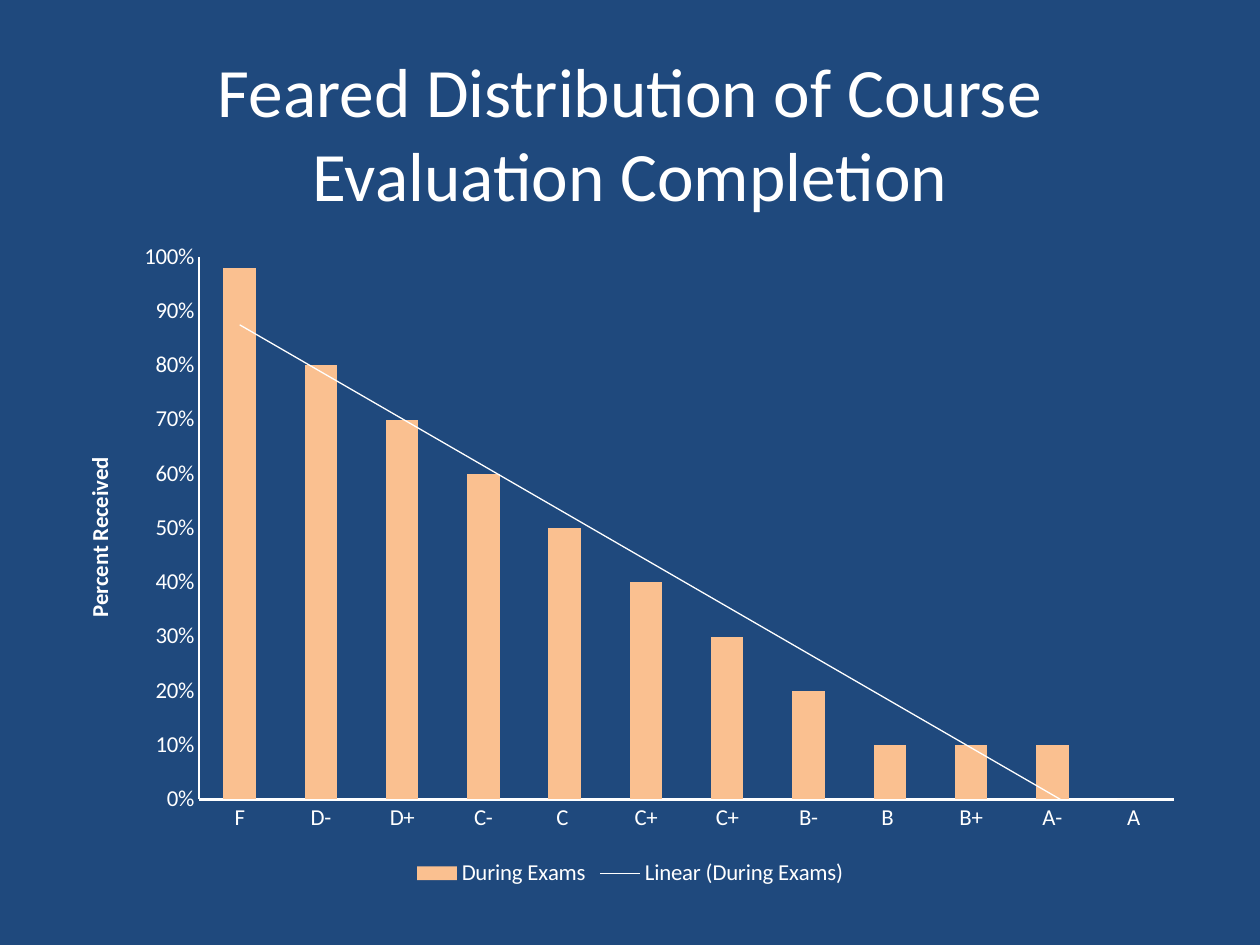
import pptx
import pptx.chart.data
import pptx.dml.color
import pptx.enum.chart
import pptx.enum.text
import pptx.oxml
import pptx.oxml.ns
import pptx.util

Inches = pptx.util.Inches
Pt = pptx.util.Pt
enums = pptx.enum.chart
WHITE, NAVY, PEACH = "FFFFFF", "1F497D", "FAC090"
GRADES = ["F", "D-", "D+", "C-", "C ", "C+", "C+", "B-", "B ", "B+", "A-", "A"]
RATES = [0.98, 0.8, 0.7, 0.6, 0.5, 0.4, 0.3, 0.2, 0.1, 0.1, 0.1, 0]


def color(hue):
    return pptx.dml.color.RGBColor.from_string(hue)


def apply(item, values):
    for name, value in values.items():
        setattr(item, name, value)


def style(font, size, bold=False):
    apply(font, {"name": "Calibri", "size": Pt(size), "bold": bold})
    font.color.rgb = color(WHITE)


def stroke(line, width):
    line.color.rgb = color(WHITE)
    line.width = Pt(width)


def chart_xml(parent, before, body):
    """Insert a chart element ahead of the named child of parent."""
    tag, rest = body[1:].split(">", 1)
    node = pptx.oxml.parse_xml(
        f"<{tag} {pptx.oxml.ns.nsdecls('c', 'a')}>{rest}")
    parent.find(pptx.oxml.ns.qn(before)).addprevious(node)


def add_title(slide, left, top, width, height):
    box = slide.shapes.add_textbox(
        Inches(left), Inches(top), Inches(width), Inches(height))
    frame = box.text_frame
    apply(frame, {"word_wrap": True,
                  "vertical_anchor": pptx.enum.text.MSO_ANCHOR.MIDDLE})
    para = frame.paragraphs[0]
    para.alignment = pptx.enum.text.PP_ALIGN.CENTER
    run = para.add_run()
    run.text = "Feared Distribution of Course Evaluation Completion"
    style(run.font, 39.6)


def add_graph(slide, left, top, width, height):
    data = pptx.chart.data.CategoryChartData(number_format="0%")
    data.categories = GRADES
    data.add_series("During Exams", RATES)
    chart = slide.shapes.add_chart(
        enums.XL_CHART_TYPE.COLUMN_CLUSTERED, Inches(left), Inches(top),
        Inches(width), Inches(height), data).chart
    apply(chart, {"has_title": False, "has_legend": True})
    style(chart.font, 18)
    apply(chart.legend, {"position": enums.XL_LEGEND_POSITION.BOTTOM,
                         "include_in_layout": False})
    style(chart.legend.font, 13)

    # Axes
    for axis, weight in ((chart.category_axis, 1.5), (chart.value_axis, 0.75)):
        apply(axis, {"has_major_gridlines": False,
                     "major_tick_mark": enums.XL_TICK_MARK.NONE,
                     "minor_tick_mark": enums.XL_TICK_MARK.NONE})
        style(axis.tick_labels.font, 13)
        stroke(axis.format.line, weight)
    scale = chart.value_axis
    apply(scale, {"minimum_scale": 0, "maximum_scale": 1, "major_unit": 0.1,
                  "has_title": True})
    apply(scale.tick_labels, {"number_format": "0%",
                              "number_format_is_linked": False})
    run = scale.axis_title.text_frame.paragraphs[0].add_run()
    run.text = "Percent Received"
    style(run.font, 13, True)

    # Columns and their linear trend
    plot = chart.plots[0]
    apply(plot, {"gap_width": 150, "vary_by_categories": False})
    bars = plot.series[0]
    bars.format.fill.solid()
    bars.format.fill.fore_color.rgb = color(PEACH)
    chart_xml(bars._element, "c:cat", (
        f'<c:trendline><c:spPr><a:ln w="{Pt(0.75)}"><a:solidFill>'
        f'<a:srgbClr val="{WHITE}"/></a:solidFill></a:ln></c:spPr>'
        '<c:trendlineType val="linear"/><c:dispRSqr val="0"/>'
        '<c:dispEq val="0"/></c:trendline>'))

    # Inner plot area, as shares of the chart box
    area = chart._chartSpace.chart.plotArea
    for old in area.findall(pptx.oxml.ns.qn("c:layout")):
        area.remove(old)
    share = {"x": 0.12, "y": 0.04, "w": 0.86, "h": 0.82}
    chart_xml(area, "c:barChart", (
        '<c:layout><c:manualLayout><c:layoutTarget val="inner"/>'
        '<c:xMode val="edge"/><c:yMode val="edge"/>'
        + "".join(f'<c:{key} val="{part}"/>' for key, part in share.items())
        + '</c:manualLayout></c:layout>'))


def main():
    deck = pptx.Presentation()
    apply(deck, {"slide_width": Inches(10), "slide_height": Inches(7.5)})
    slide = deck.slides.add_slide(deck.slide_layouts[6])
    slide.background.fill.solid()
    slide.background.fill.fore_color.rgb = color(NAVY)
    add_title(slide, 0.5, 0.42, 9, 1.25)
    add_graph(slide, 0.5, 1.83, 9, 5.25)
    deck.save("out.pptx")


if __name__ == "__main__":
    main()
